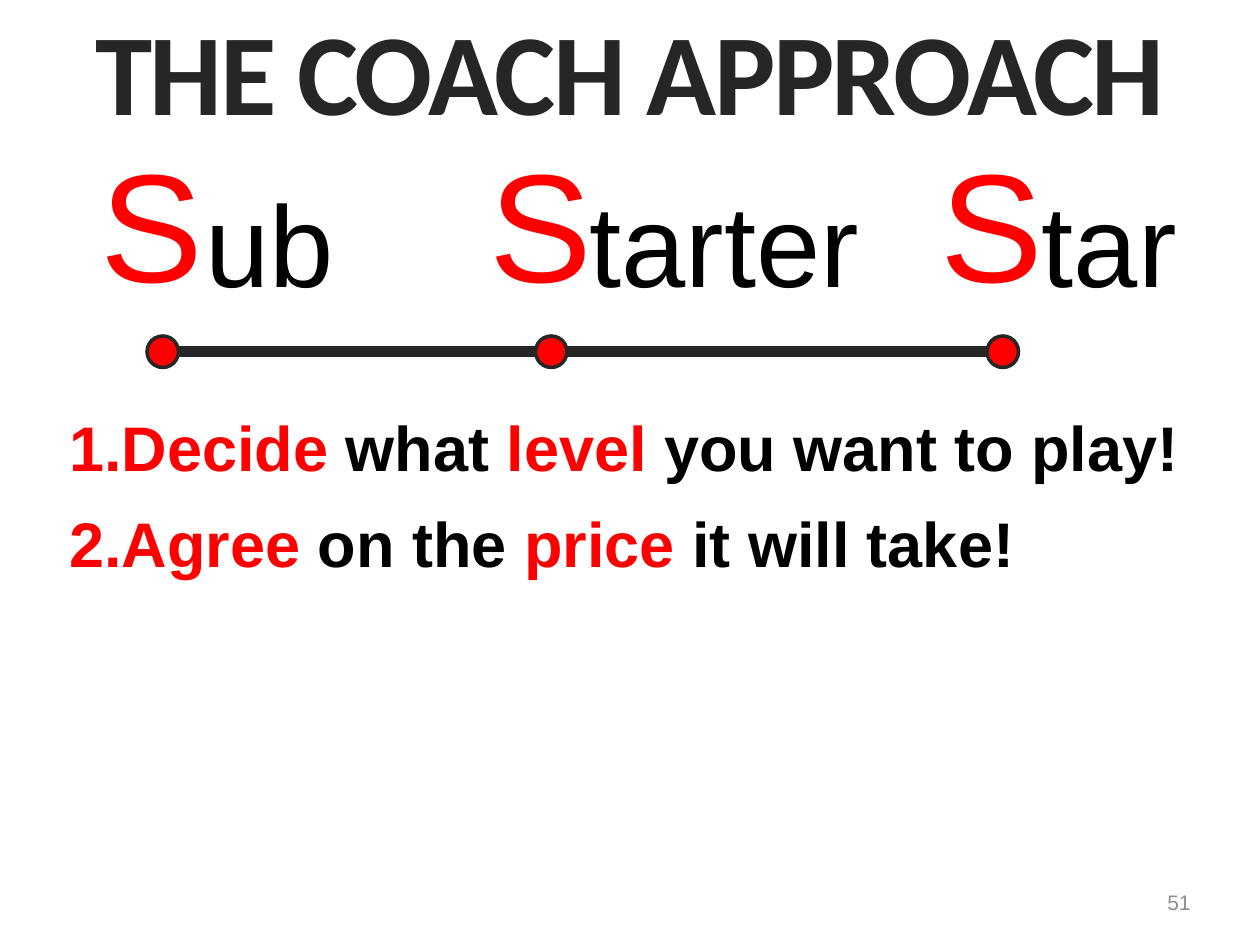
from dataclasses import dataclass

import lxml.etree
import pptx
import pptx.dml.color
import pptx.enum.shapes
import pptx.enum.text
import pptx.oxml.ns
import pptx.util

Pt = pptx.util.Pt
ALIGN = pptx.enum.text.PP_ALIGN
ANCHOR = pptx.enum.text.MSO_ANCHOR

COLOURS = {
    "red": "FF0000",
    "black": "000000",
    "dark": "262626",
    "outline": "DFDFDF",
    "grey": "8D8D8D",
}


@dataclass
class Box:
    left: float
    top: float
    width: float
    height: float


@dataclass
class Level:
    """A playing level: large initial, rest of the word, dot on the scale."""
    initial: Box
    rest: Box
    ending: str


LEVELS = [
    Level(Box(54, 70, 54, 106.5), Box(113.8, 94.5, 81.4, 81.4), "ub"),
    Level(Box(276, 70, 66, 106.5), Box(333.4, 94.5, 162, 81.4), "tarter"),
    Level(Box(534, 70, 78, 106.5), Box(591.8, 94.5, 85, 81.4), "tar"),
]
STEPS = [
    [("Decide", "red"), (" what ", "black"), ("level", "red"),
     (" you want to play!", "black")],
    [("Agree", "red"), (" on the ", "black"), ("price", "red"),
     (" it will take!", "black")],
]
DOT_SIZE = 18
DOT_OFFSET = 30  # from the left of the initial to the left of its dot
SCALE_Y = 201


def colour(name: str) -> pptx.dml.color.RGBColor:
    return pptx.dml.color.RGBColor.from_string(COLOURS[name])


def add_child(parent, tag: str, **attributes: str):
    return lxml.etree.SubElement(parent, pptx.oxml.ns.qn(tag), attributes)


def add_text(slide, box: Box, paragraphs: list, *, size: float,
             font: str = "Arial", bold: bool = False, align=ALIGN.LEFT,
             anchor=ANCHOR.TOP, wrap: bool = True, inset: float = 3.6,
             numbered: bool = False, space_before: float = 0):
    """Add a text box; each paragraph is a list of (text, colour name)."""
    shape = slide.shapes.add_textbox(
        Pt(box.left), Pt(box.top), Pt(box.width), Pt(box.height))
    frame = shape.text_frame
    frame.word_wrap = wrap
    frame.auto_size = pptx.enum.text.MSO_AUTO_SIZE.SHAPE_TO_FIT_TEXT
    frame.vertical_anchor = anchor
    frame.margin_left = frame.margin_right = Pt(inset)
    frame.margin_top = frame.margin_bottom = Pt(inset)
    for index, runs in enumerate(paragraphs):
        paragraph = frame.add_paragraph() if index else frame.paragraphs[0]
        paragraph.alignment = align
        if index:
            paragraph.space_before = Pt(space_before)
        if numbered:
            properties = paragraph._p.get_or_add_pPr()
            properties.set("marL", str(Pt(27)))
            properties.set("indent", str(Pt(-27)))
            add_child(properties, "a:buFont", typeface="+mj-lt")
            add_child(properties, "a:buAutoNum", type="arabicPeriod")
        for text, colour_name in runs:
            run = paragraph.add_run()
            run.text = text
            run.font.size = Pt(size)
            run.font.name = font
            run.font.bold = bold
            run.font.color.rgb = colour(colour_name)
    return shape


def style_title(shape) -> None:
    """Tighten the letter spacing and outline the letters."""
    properties = shape.text_frame.paragraphs[0].runs[0]._r.get_or_add_rPr()
    properties.set("spc", "-150")
    outline = add_child(properties, "a:ln", w=str(Pt(0.75)))
    fill = add_child(outline, "a:solidFill")
    add_child(fill, "a:srgbClr", val=COLOURS["outline"])
    properties.insert(0, outline)


def add_scale_line(slide, start: float, end: float) -> None:
    line = slide.shapes.add_connector(
        pptx.enum.shapes.MSO_CONNECTOR.STRAIGHT,
        Pt(start), Pt(SCALE_Y), Pt(end), Pt(SCALE_Y))
    line.line.color.rgb = colour("dark")
    line.line.width = Pt(6)
    add_child(line._element.spPr, "a:effectLst")


def add_dot(slide, left: float) -> None:
    dot = slide.shapes.add_shape(
        pptx.enum.shapes.MSO_SHAPE.OVAL,
        Pt(left), Pt(SCALE_Y - DOT_SIZE / 2), Pt(DOT_SIZE), Pt(DOT_SIZE))
    dot.shadow.inherit = False
    dot.fill.solid()
    dot.fill.fore_color.rgb = colour("red")
    dot.line.color.rgb = colour("dark")
    dot.line.width = Pt(2)


def main() -> None:
    presentation = pptx.Presentation()
    presentation.slide_width = Pt(720)
    presentation.slide_height = Pt(540)
    slide = presentation.slides.add_slide(presentation.slide_layouts[6])

    # Title
    title = add_text(slide, Box(0, 0, 720, 77),
                     [[("THE COACH APPROACH", "dark")]], size=66,
                     font="Calibri", bold=True, align=ALIGN.CENTER, inset=0)
    style_title(title)

    # Scale with one dot for each level
    dot_lefts = [level.initial.left + DOT_OFFSET for level in LEVELS]
    add_scale_line(slide, dot_lefts[0] + DOT_SIZE / 2,
                   dot_lefts[-1] + DOT_SIZE / 2)
    for level in LEVELS:
        add_text(slide, level.initial, [[("S", "red")]], size=88)
    for left in dot_lefts:
        add_dot(slide, left)
    for level in LEVELS:
        add_text(slide, level.rest, [[(level.ending, "black")]], size=66,
                 wrap=False)

    # Numbered steps
    add_text(slide, Box(36, 229.7, 653.8, 102), STEPS, size=36, bold=True,
             numbered=True, space_before=12)

    # Page number
    add_text(slide, Box(662.4, 504.7, 21.6, 21), [[("51", "grey")]], size=12,
             align=ALIGN.RIGHT, anchor=ANCHOR.MIDDLE, wrap=False)

    presentation.save("out.pptx")


if __name__ == "__main__":
    main()
